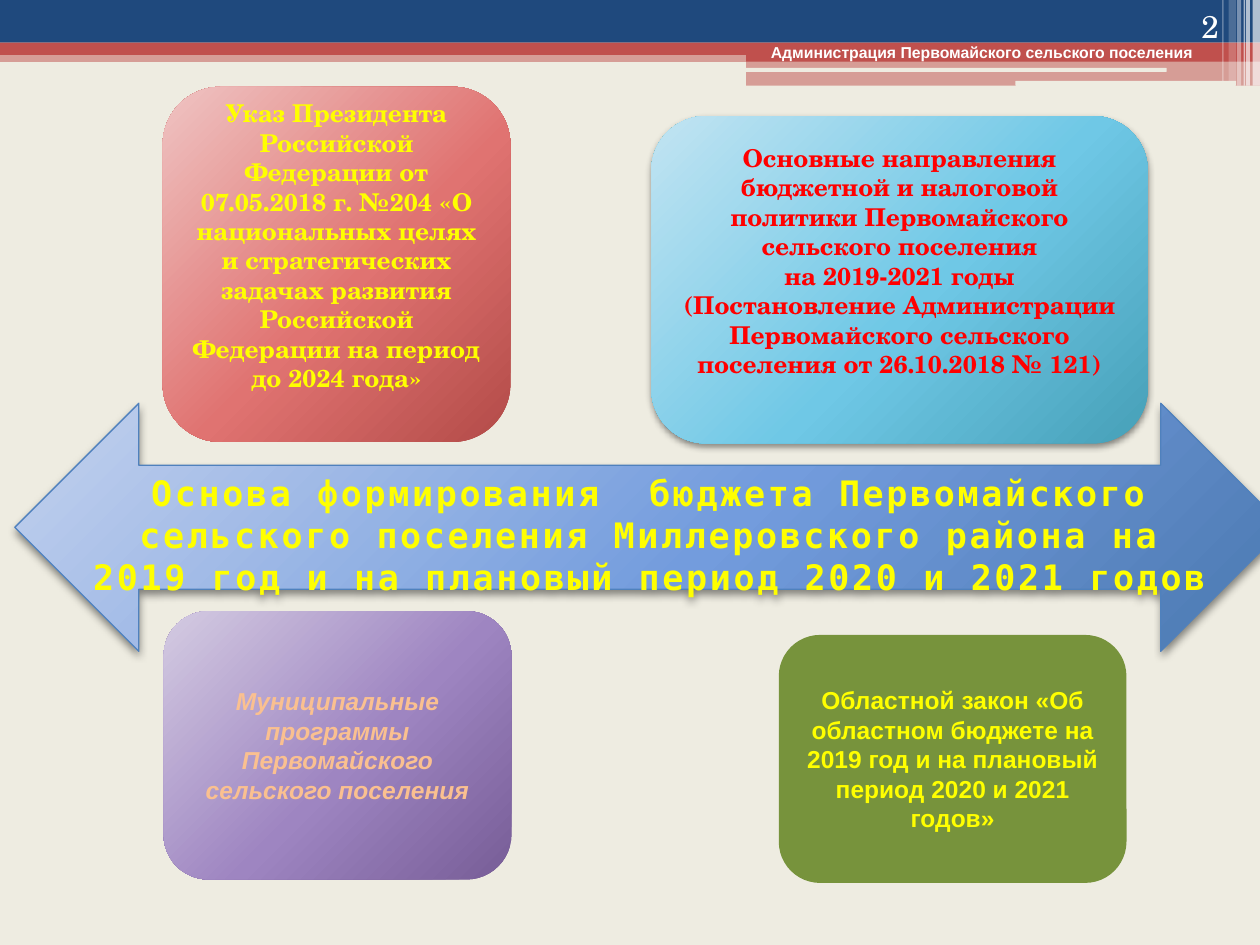
from lxml.etree import SubElement
from pptx import Presentation
from pptx.dml.color import RGBColor
from pptx.enum.shapes import MSO_SHAPE as Shape
from pptx.enum.text import MSO_ANCHOR as Anchor, PP_ALIGN as Align
from pptx.oxml.ns import qn
from pptx.util import Cm, Pt

COLORS = {
    "paper": "EEECE1", "navy": "1F497D", "red": "C0504D", "white": "FFFFFF",
    "yellow": "FFFF00", "scarlet": "FF0000", "peach": "FAC090",
    "green": "77933C", "blue": "4F81BD", "black": "000000",
}
GRADIENTS = {
    "rose": ("EFC4C3", "E07371", "B34B48"),
    "sky": ("C2E4F2", "6FC8E6", "46A0B8"),
    "violet": ("D4CBE2", "9E85C1", "775D97"),
    "steel": ("C4D2EE", "739CDD", "4A78B0"),
}
SERIF, SANS, MONO = "TeX Gyre Schola", "Arial", "DejaVu Sans Mono"


def color(name):
    return RGBColor.from_string(COLORS[name])


def add_node(parent, tag, **attributes):
    return SubElement(parent, qn(tag), {key: str(value) for key, value in attributes.items()})


class SlideBuilder:
    def __init__(self, page):
        self.page = page
        page.background.fill.solid()
        page.background.fill.fore_color.rgb = color("paper")

    def shape(self, kind, place, fill, opacity=100):
        box = self.page.shapes.add_shape(kind, *map(Cm, place))
        box.shadow.inherit = False
        box.line.fill.background()
        if fill in GRADIENTS:
            self.gradient(box, GRADIENTS[fill])
        else:
            box.fill.solid()
            box.fill.fore_color.rgb = color(fill)
        if opacity < 100:
            tint = box._element.spPr.find(qn("a:solidFill"))[0]
            add_node(tint, "a:alpha", val=opacity * 1000)
        return box

    def gradient(self, box, stops):
        box.fill.gradient()
        node = box._element.spPr.find(qn("a:gradFill"))
        for child in list(node):
            node.remove(child)
        stop_list = add_node(node, "a:gsLst")
        for position, value in zip((0, 55, 100), stops):
            stop = add_node(stop_list, "a:gs", pos=position * 1000)
            add_node(stop, "a:srgbClr", val=value)
        sweep = add_node(node, "a:path", path="circle")
        add_node(sweep, "a:fillToRect", l=-40000, t=-90000, r=140000, b=190000)

    def shadow(self, box):
        effects = box._element.spPr.find(qn("a:effectLst"))
        cast = add_node(effects, "a:outerShdw", blurRad=Pt(4), dist=Pt(2),
                        dir=5400000, rotWithShape=0)
        tint = add_node(cast, "a:srgbClr", val=COLORS["black"])
        add_node(tint, "a:alpha", val=45000)

    def fill_text(self, box, lines, size, font, ink, bold=True, italic=False,
                  align=Align.CENTER, anchor=Anchor.MIDDLE, spacing=0):
        frame = box.text_frame
        frame.word_wrap = True
        frame.vertical_anchor = anchor
        for index, line in enumerate(lines):
            para = frame.add_paragraph() if index else frame.paragraphs[0]
            para.add_run().text = line
            para.alignment = align
            para.font.size = Pt(size)
            para.font.name = font
            para.font.bold = bold
            para.font.italic = italic
            para.font.color.rgb = color(ink)
            if spacing:
                para.font._element.set("spc", str(int(spacing * 100)))

    def label(self, place, line, size, font, align=Align.LEFT, **style):
        box = self.page.shapes.add_textbox(*map(Cm, place))
        self.fill_text(box, [line], size, font, "white", align=align, **style)

    def card(self, place, fill, lines, font, ink, italic=False, bottom=0.13):
        box = self.shape(Shape.ROUNDED_RECTANGLE, place, fill)
        self.fill_text(box, lines, 14, font, ink, italic=italic)
        box.text_frame.margin_bottom = Cm(bottom)
        return box

    def banner(self, place, fill, line):
        box = self.shape(Shape.LEFT_RIGHT_ARROW, place, fill)
        box.line.color.rgb = color("blue")
        box.line.width = Pt(0.75)
        self.shadow(box)
        self.fill_text(box, [line], 20, MONO, "yellow", anchor=Anchor.TOP, spacing=1.5)


def main():
    deck = Presentation()
    deck.slide_width, deck.slide_height = Cm(25.4), Cm(19.05)
    builder = SlideBuilder(deck.slides.add_slide(deck.slide_layouts[6]))

    for place, fill, opacity in (
        ((0, 1.02, 25.4, 0.23), "red", 50),
        ((0, 0, 25.4, 0.86), "navy", 100),
        ((0, 0.86, 25.4, 0.25), "red", 100),
        ((15.04, 0.99, 10.36, 0.25), "red", 100),
        ((15.04, 1.22, 10.36, 0.51), "red", 50),
    ):
        builder.shape(Shape.RECTANGLE, place, fill, opacity)
    for place in ((15.01, 1.37, 8.51, 0.08), (20.47, 1.63, 4.45, 0.1)):
        builder.shape(Shape.ROUNDED_RECTANGLE, place, "paper")
    for left, width, height, opacity in (
        (25.25, 0.15, 1.73, 65), (25.12, 0.08, 1.73, 65), (25.07, 0.03, 1.73, 60),
        (24.94, 0.08, 1.73, 40), (24.77, 0.15, 1.63, 20), (24.64, 0.03, 1.63, 30),
    ):
        builder.shape(Shape.RECTANGLE, (left, 0, width, height), "white", opacity)

    builder.label((15.29, 0.74, 9.4, 0.64), "Администрация Первомайского сельского поселения",
                  9, SANS, anchor=Anchor.TOP)
    builder.card((3.28, 1.75, 7.01, 7.16), "rose", [
        "Указ Президента Российской Федерации от 07.05.2018 г. №204 «О национальных "
        "целях и стратегических задачах развития Российской Федерации на период до 2024 года»",
    ], SERIF, "yellow", bottom=0.89)
    directions = builder.card((13.13, 2.34, 10.01, 6.6), "sky", [
        "Основные направления бюджетной и налоговой политики Первомайского сельского поселения",
        "на 2019-2021 годы",
        "(Постановление Администрации Первомайского сельского поселения от 26.10.2018 № 121)",
    ], SERIF, "scarlet", bottom=0.89)
    builder.shadow(directions)
    builder.card((3.3, 12.32, 7.01, 5.41), "violet",
                 ["Муниципальные программы Первомайского сельского поселения"],
                 SANS, "peach", italic=True)
    builder.card((15.7, 12.8, 7.01, 5), "green", [
        "Областной закон «Об областном бюджете на 2019 год и на плановый период 2020 и 2021 годов»",
    ], SANS, "yellow")
    builder.banner((0.3, 8.13, 25.6, 5), "steel",
                   "Основа формирования  бюджета Первомайского сельского поселения "
                   "Миллеровского района на 2019 год и на плановый период 2020 и 2021 годов")
    builder.label((22.71, 0, 2.11, 1.02), "2", 18, SERIF, bold=False,
                  align=Align.RIGHT, anchor=Anchor.BOTTOM)

    deck.save("out.pptx")


if __name__ == "__main__":
    main()
